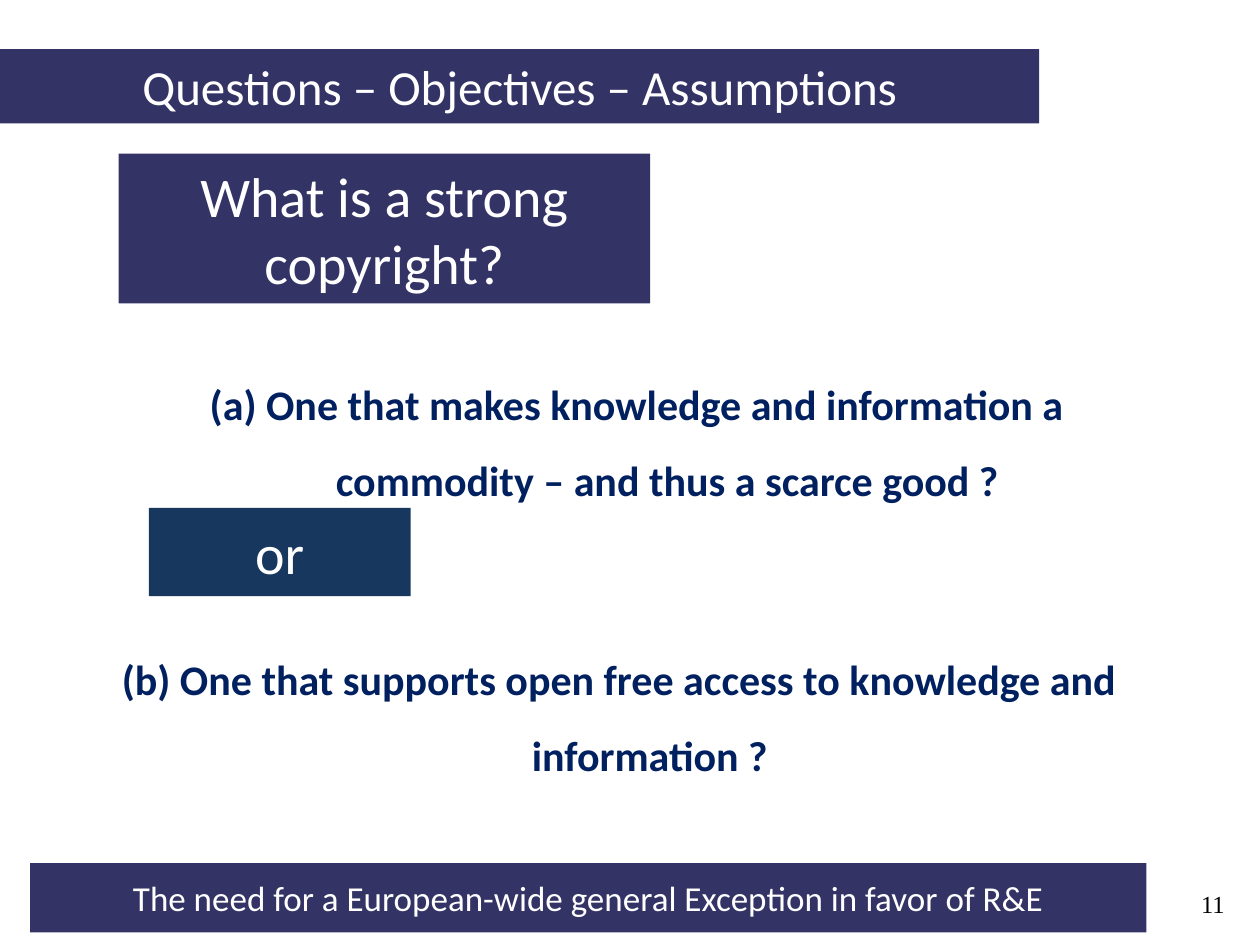
from dataclasses import dataclass

from pptx import Presentation
from pptx.dml.color import RGBColor
from pptx.enum.shapes import MSO_SHAPE
from pptx.enum.text import MSO_ANCHOR, PP_ALIGN
from pptx.util import Cm, Pt

COLORS = {
    "bar": "333366",
    "or": "17375E",
    "white": "FFFFFF",
    "navy": "002060",
    "black": "000000",
}
HANG = 1.24  # hanging indent of the two options, in cm


@dataclass
class Box:
    """A filled rectangle with centred text; lengths in cm, size in points."""
    text: str
    left: float
    top: float
    width: float
    height: float
    size: int
    fill: str = "bar"
    color: str = "white"
    inset: bool = True
    option: bool = False


def color(name: str) -> RGBColor:
    return RGBColor.from_string(COLORS[name])


def add_text(para, text: str, size: int, tint: str, font: str = "Calibri") -> None:
    run = para.add_run()
    run.text = text
    run.font.name = font
    run.font.size = Pt(size)
    run.font.color.rgb = color(tint)


def no_inset(frame) -> None:
    frame.margin_left = frame.margin_right = 0
    frame.margin_top = frame.margin_bottom = 0


def add_box(slide, box: Box) -> None:
    shape = slide.shapes.add_shape(
        MSO_SHAPE.RECTANGLE,
        Cm(box.left), Cm(box.top), Cm(box.width), Cm(box.height))
    shape.shadow.inherit = False
    shape.fill.solid()
    shape.fill.fore_color.rgb = color(box.fill)
    shape.line.fill.background()

    frame = shape.text_frame
    frame.word_wrap = True
    frame.vertical_anchor = MSO_ANCHOR.MIDDLE
    if not box.inset:
        no_inset(frame)

    para = frame.paragraphs[0]
    para.alignment = PP_ALIGN.CENTER
    add_text(para, box.text, box.size, box.color)
    if box.option:
        para.line_spacing = 1.5
        para.runs[0].font.bold = True
        props = para._p.get_or_add_pPr()
        props.set("marL", str(Cm(HANG)))
        props.set("indent", str(-Cm(HANG)))


def add_number(slide, text: str) -> None:
    shape = slide.shapes.add_textbox(Cm(22.96), Cm(17.4), Cm(1.73), Cm(1.32))
    frame = shape.text_frame
    frame.word_wrap = True
    no_inset(frame)
    frame.margin_bottom = Cm(0.2)
    frame.vertical_anchor = MSO_ANCHOR.BOTTOM
    para = frame.paragraphs[0]
    para.alignment = PP_ALIGN.RIGHT
    add_text(para, text, 14, "black", "Times New Roman")


BOXES = [
    # Footer and title bars
    Box("The need for a European-wide general Exception in favor of R&E",
        0.61, 17.4, 22.5, 1.4, 20, inset=False),
    Box("Questions – Objectives – Assumptions",
        0, 0.99, 20.95, 1.5, 28, inset=False),
    # Option (a), then the question
    Box("(a) One that makes knowledge and information a commodity"
        " – and thus a scarce good ?",
        2.18, 6.86, 21.31, 3.58, 24, "white", "navy", option=True),
    Box("What is a strong copyright?", 2.39, 3.1, 10.72, 3.02, 32),
    # Option (b), then the "or" between both
    Box("(b) One that supports open free access to knowledge"
        " and information ?",
        1.98, 12.22, 21, 3.96, 24, "white", "navy", option=True),
    Box("or", 3, 10.24, 5.28, 1.78, 32, "or"),
]


def main() -> None:
    deck = Presentation()
    deck.slide_width, deck.slide_height = Cm(25.4), Cm(19.05)
    slide = deck.slides.add_slide(deck.slide_layouts[6])
    for box in BOXES:
        add_box(slide, box)
    add_number(slide, "11")
    deck.save("out.pptx")


if __name__ == "__main__":
    main()
